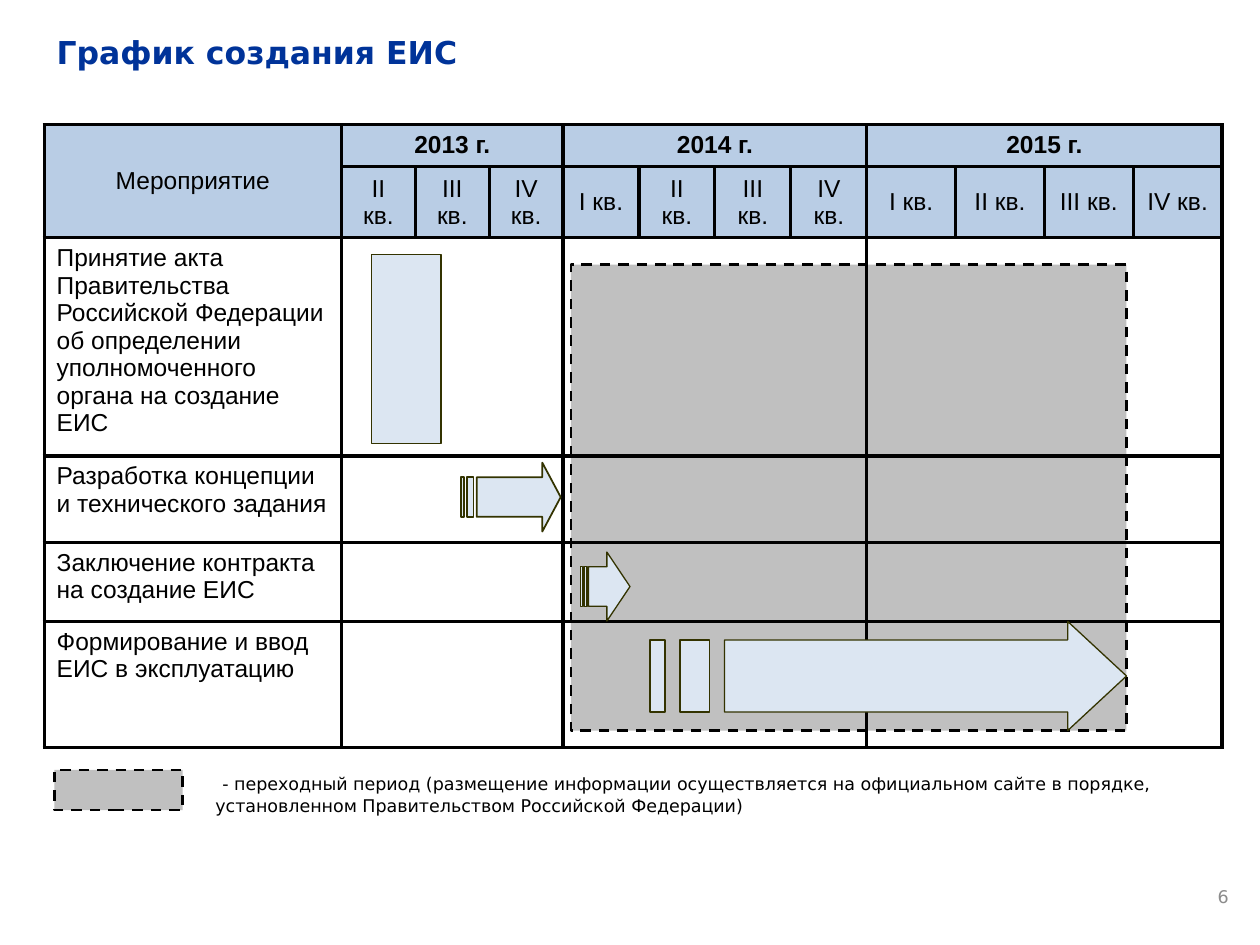
from dataclasses import dataclass

from lxml.etree import SubElement
from pptx import Presentation
from pptx.dml.color import RGBColor
from pptx.enum.dml import MSO_LINE_DASH_STYLE as Dash
from pptx.enum.shapes import MSO_SHAPE as Shape
from pptx.enum.text import MSO_ANCHOR as Anchor, PP_ALIGN as Align
from pptx.oxml.ns import qn
from pptx.util import Pt


@dataclass(frozen=True)
class Theme:
    title: str = "003399"
    ink: str = "000000"
    header: str = "B9CDE5"
    bar: str = "DCE6F2"
    bar_edge: str = "333300"
    transition: str = "C0C0C0"
    page: str = "8C8C8C"
    table_font: str = "Arial"
    text_font: str = "DejaVu Sans"
    title_size: float = 18
    table_size: float = 14
    note_size: float = 10


THEME = Theme()
QUARTERS = ["I кв.", "II кв.", "III кв.", "IV кв."]
# year, its quarters, width of one quarter
YEARS = [("2013 г.", QUARTERS[1:], 42.2),
         ("2014 г.", QUARTERS, 43.4),
         ("2015 г.", QUARTERS, 50.75)]
# activity, row height
ACTIVITIES = [
    ("Принятие акта Правительства Российской Федерации об определении "
     "уполномоченного органа на создание ЕИС", 124.6),
    ("Разработка концепции и технического задания", 49.6),
    ("Заключение контракта на создание ЕИС", 45.2),
    ("Формирование и ввод ЕИС в эксплуатацию", 72),
]
ACTIVITY_WIDTH = 170
HEADER_HEIGHTS = [24, 40.6]


def set_font(paragraph, face, size, color, bold=False):
    font = paragraph.font
    font.name, font.size, font.bold = face, Pt(size), bold
    font.color.rgb = RGBColor.from_string(color)


def add_text(slide, box, text, size, color, bold=False, align=Align.LEFT,
             anchor=Anchor.TOP):
    frame = slide.shapes.add_textbox(*map(Pt, box)).text_frame
    frame.word_wrap = True
    frame.vertical_anchor = anchor
    paragraph = frame.paragraphs[0]
    paragraph.text = text
    paragraph.alignment = align
    set_font(paragraph, THEME.text_font, size, color, bold)
    return paragraph


def paint(shape, fill, edge, width):
    shape.shadow.inherit = False
    shape.fill.solid()
    shape.fill.fore_color.rgb = RGBColor.from_string(fill)
    shape.line.color.rgb = RGBColor.from_string(edge)
    shape.line.width = Pt(width)


def add_transition_period(slide, box):
    period = slide.shapes.add_shape(Shape.RECTANGLE, *map(Pt, box))
    paint(period, THEME.transition, THEME.ink, 1.5)
    period.line.dash_style = Dash.DASH


def add_bar(slide, box):
    bar = slide.shapes.add_shape(Shape.RECTANGLE, *map(Pt, box))
    paint(bar, THEME.bar, THEME.bar_edge, 0.75)


def add_striped_arrow(slide, box, head, inset, edge_width=0.75):
    """Arrow whose stripes are measured in 32nds of its width."""
    left, top, width, height = box
    unit = width / 32
    right, low, high = left + width, top + height - inset, top + inset
    neck, tail = right - head, left + 5 * unit
    outlines = [[(neck, top), (neck, high), (tail, high), (tail, low), (neck, low),
                 (neck, top + height), (right, top + height / 2)]]
    for start, end in ((2, 4), (0, 1)):
        x1, x2 = left + start * unit, left + end * unit
        outlines.append([(x1, high), (x1, low), (x2, low), (x2, high)])
    contours = [[(Pt(x), Pt(y)) for x, y in outline] for outline in outlines]
    builder = slide.shapes.build_freeform(*contours[0][0])
    for index, (start, *rest) in enumerate(contours):
        if index:
            builder.move_to(*start)
        builder.add_line_segments(rest, close=True)
    paint(builder.convert_to_shape(), THEME.bar, THEME.bar_edge, edge_width)


def set_borders(cell, left, right):
    """Draw the cell's edges; a side of width 0 stays open."""
    properties = cell._tc.get_or_add_tcPr()
    for index, (tag, width) in enumerate(
            (("lnL", left), ("lnR", right), ("lnT", 2), ("lnB", 2))):
        line = properties.makeelement(qn(f"a:{tag}"), {"w": str(Pt(width))})
        if width:
            fill = SubElement(line, qn("a:solidFill"))
            SubElement(fill, qn("a:srgbClr"), val=THEME.ink)
        else:
            SubElement(line, qn("a:noFill"))
        properties.insert(index, line)


def fill_cell(cell, text, align=Align.CENTER, anchor=Anchor.MIDDLE, bold=False):
    cell.vertical_anchor = anchor
    paragraph = cell.text_frame.paragraphs[0]
    paragraph.text = text
    paragraph.alignment = align
    set_font(paragraph, THEME.table_font, THEME.table_size, THEME.ink, bold)


def add_schedule(slide, box):
    widths = [ACTIVITY_WIDTH] + [w for _, names, w in YEARS for _ in names]
    heights = HEADER_HEIGHTS + [height for _, height in ACTIVITIES]
    table = slide.shapes.add_table(len(heights), len(widths), *map(Pt, box)).table
    table.first_row = table.horz_banding = False
    for column, width in zip(table.columns, widths):
        column.width = Pt(width)
    for row, height in zip(table.rows, heights):
        row.height = Pt(height)

    edges = {0: 2, 1: 1.5}
    fill_cell(table.cell(0, 0), "Мероприятие")
    table.cell(0, 0).merge(table.cell(1, 0))
    first = 1
    for year, names, _ in YEARS:
        fill_cell(table.cell(0, first), year, anchor=Anchor.TOP, bold=True)
        for column, name in enumerate(names, first):
            fill_cell(table.cell(1, column), name)
        following = first + len(names)
        table.cell(0, first).merge(table.cell(0, following - 1))
        first = following
        edges[first] = 2
    for row, (activity, _) in enumerate(ACTIVITIES, len(HEADER_HEIGHTS)):
        fill_cell(table.cell(row, 0), activity, Align.LEFT, Anchor.TOP)

    for row in range(len(heights)):
        inner = 2 if row == 1 else 0
        for column in range(len(widths)):
            cell = table.cell(row, column)
            if row < len(HEADER_HEIGHTS):
                cell.fill.solid()
                cell.fill.fore_color.rgb = RGBColor.from_string(THEME.header)
            else:
                cell.fill.background()
            left, right = edges.get(column, inner), edges.get(column + 1, inner)
            if cell.is_merge_origin and row == 0 and column:
                right = 2
            set_borders(cell, left, right)


def add_progress(slide, left, top):
    """Place the bars and arrows relative to the schedule's corner."""
    add_bar(slide, (left + 187.2, top + 74.2, 39.6, 108))
    add_striped_arrow(slide, (left + 238.3, top + 193, 56.9, 39.4), 10.5, 8.4, 1)
    add_striped_arrow(slide, (left + 306.7, top + 244.1, 28.1, 39.4), 13.2, 8.4)
    add_striped_arrow(slide, (left + 346.3, top + 283.7, 272.2, 62.4), 33.6, 10.6)


def add_legend(slide, left, top):
    add_transition_period(slide, (left, top, 73.4, 23))
    note = add_text(
        slide, (left + 85, top - 3, 567.4, 33),
        "- переходный период (размещение информации осуществляется на официальном "
        "сайте в порядке, установленном Правительством Российской Федерации)",
        THEME.note_size, THEME.ink)
    note.line_spacing = Pt(13)
    note._p.get_or_add_pPr().set("indent", str(Pt(4)))


def main():
    deck = Presentation()
    deck.slide_width, deck.slide_height = Pt(720), Pt(540)
    slide = deck.slides.add_slide(deck.slide_layouts[6])
    left, top = 25.2, 71.4
    add_transition_period(slide, (left + 301, top + 79.8, 317.5, 266.4))
    add_schedule(slide, (left, top, 673.2, 356))
    add_text(slide, (left, 15.1, 658, 28.8), "График создания ЕИС",
             THEME.title_size, THEME.title, bold=True)
    add_progress(slide, left, top)
    add_legend(slide, 31, 440)
    add_text(slide, (541.4, 498.2, 167.8, 28.8), "6", THEME.note_size, THEME.page,
             align=Align.RIGHT, anchor=Anchor.MIDDLE)
    deck.save("out.pptx")


if __name__ == "__main__":
    main()
